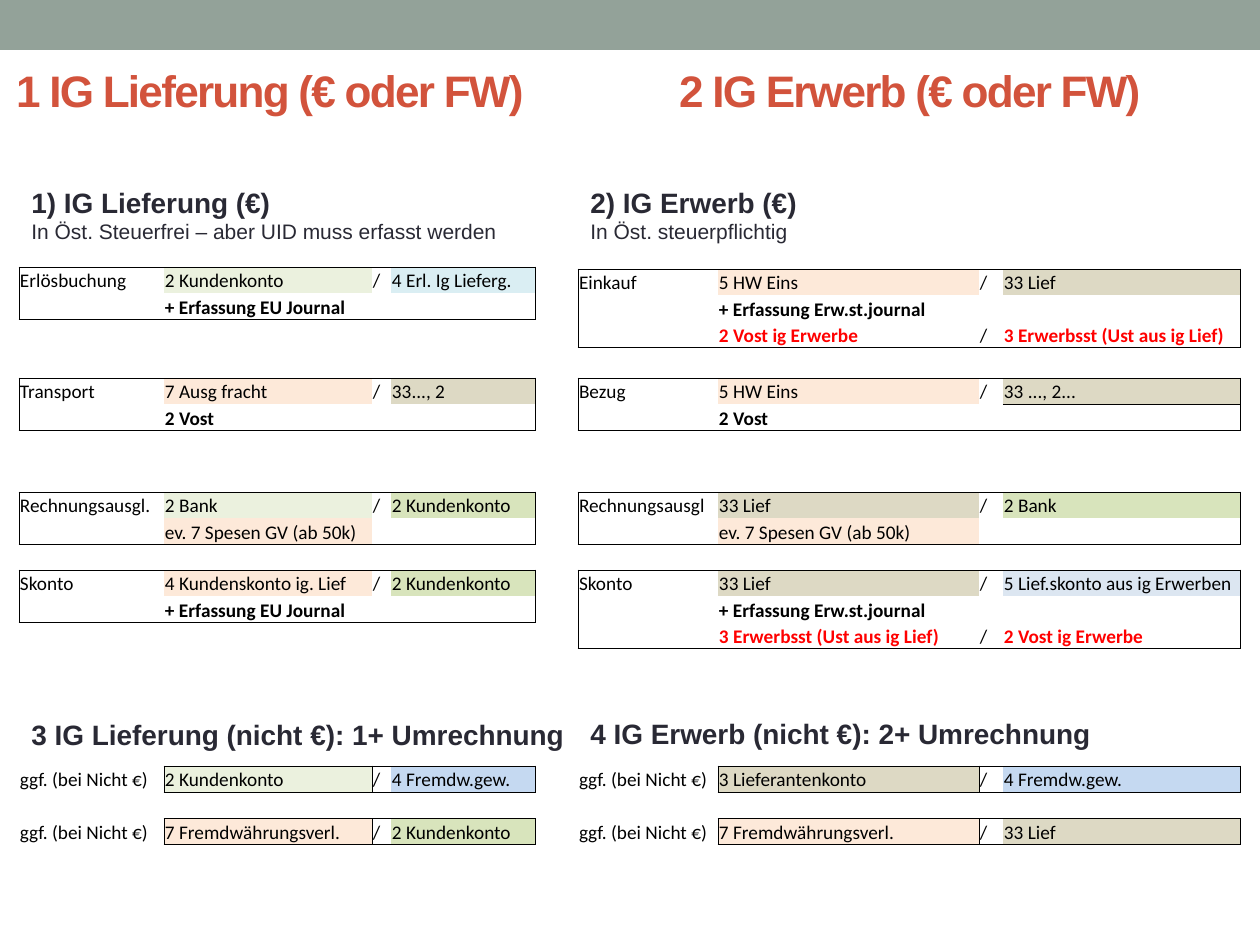
from dataclasses import dataclass

from lxml import etree
from pptx import Presentation
from pptx import util as u
from pptx.dml import color
from pptx.enum import shapes, text
from pptx.oxml import ns

SCALE = u.Inches(1) / 126
NO_STYLE = "{2D5ABB26-0587-4C30-8999-92F81FD0307C}"


def px(n):
    return u.Emu(round(n * SCALE))


def rgb(code):
    return color.RGBColor.from_string(code)


def put(obj, values):
    for name, value in values.items():
        setattr(obj, name, value)


def child(parent, tag, **attrs):
    return etree.SubElement(parent, ns.qn(tag), attrs)


@dataclass(frozen=True)
class Theme:
    head: str = "Arial"
    body: str = "Calibri"
    title_pt: float = 25.2
    heading_pt: int = 16
    note_pt: int = 12
    cell_pt: int = 11
    line_pt: float = 0.5
    band: str = "93A299"
    title: str = "D2533C"
    ink: str = "292934"
    black: str = "000000"
    red: str = "FF0000"
    mint: str = "EBF1DE"
    green: str = "D8E4BC"
    peach: str = "FDE9D9"
    sand: str = "DDD9C4"
    aqua: str = "DAEEF3"
    ice: str = "DCE6F1"
    blue: str = "C5D9F1"


class Deck:
    def __init__(self, theme):
        self.t = theme
        self.prs = Presentation()
        put(self.prs, {"slide_width": px(1260), "slide_height": px(945)})
        self.s = self.prs.slides.add_slide(self.prs.slide_layouts[5])

    def run(self, p, words, font, size, tone, bold=False):
        r = p.add_run()
        r.text = words
        put(r.font, {"name": font, "size": u.Pt(size), "bold": bold})
        r.font.color.rgb = rgb(tone)
        return r

    def band(self, x, y, w, h):
        sp = self.s.shapes.add_shape(shapes.MSO_SHAPE.RECTANGLE, px(x), px(y), px(w), px(h))
        sp.shadow.inherit = False
        sp.fill.solid()
        sp.fill.fore_color.rgb = rgb(self.t.band)
        sp.line.fill.background()

    def title(self, x, y, w, h, left, right, inset, tab):
        sp = self.s.shapes.title
        put(sp, {"left": px(x), "top": px(y), "width": px(w), "height": px(h)})
        tf = sp.text_frame
        put(tf, {"margin_left": px(inset), "margin_right": 0, "margin_top": 0, "margin_bottom": 0,
                 "word_wrap": True, "auto_size": text.MSO_AUTO_SIZE.NONE,
                 "vertical_anchor": text.MSO_ANCHOR.TOP})
        p = tf.paragraphs[0]
        p.alignment = text.PP_ALIGN.LEFT
        stops = child(p._p.get_or_add_pPr(), "a:tabLst")
        child(stops, "a:tab", pos=str(px(tab)), algn="l")
        r = self.run(p, f"{left}\t{right}", self.t.head, self.t.title_pt, self.t.title, True)
        r._r.get_or_add_rPr().set("spc", "-100")

    def heading(self, x, y, w, h, words, note=None):
        tf = self.s.shapes.add_textbox(px(x), px(y), px(w), px(h)).text_frame
        put(tf, {"word_wrap": False, "auto_size": text.MSO_AUTO_SIZE.SHAPE_TO_FIT_TEXT})
        self.run(tf.paragraphs[0], words, self.t.head, self.t.heading_pt, self.t.ink, True)
        if note:
            self.run(tf.add_paragraph(), note, self.t.head, self.t.note_pt, self.t.ink)

    def cell(self, cell, words, tone, sides):
        put(cell, {"margin_left": px(1), "margin_right": px(1), "margin_top": px(1),
                   "margin_bottom": 0, "vertical_anchor": text.MSO_ANCHOR.BOTTOM})
        p = cell.text_frame.paragraphs[0]
        if words:
            ink = self.t.red if tone == "red" else self.t.black
            self.run(p, words, self.t.body, self.t.cell_pt, ink, tone in ("bold", "red"))
        else:
            child(p._p, "a:endParaRPr", sz=str(self.t.cell_pt * 100))
        for side in "LRTB":
            if side in sides:
                ln = child(cell._tc.get_or_add_tcPr(), f"a:ln{side}", w=str(u.Pt(self.t.line_pt)))
                child(child(ln, "a:solidFill"), "a:srgbClr", val=self.t.black)
        if tone in (None, "bold", "red"):
            cell.fill.background()
        else:
            cell.fill.solid()
            cell.fill.fore_color.rgb = rgb(getattr(self.t, tone))

    def entries(self, x, y, widths, row_h, rows, boxes, underlined=()):
        frame = self.s.shapes.add_table(len(rows), len(widths), px(x), px(y),
                                        px(sum(widths)), px(row_h * len(rows)))
        tbl = frame.table
        put(tbl, {"first_row": False, "horz_banding": False})
        tbl._tbl.tblPr.find(ns.qn("a:tableStyleId")).text = NO_STYLE
        for col, w in zip(tbl.columns, widths):
            col.width = px(w)
        for i, row in enumerate(rows):
            tbl.rows[i].height = px(row_h)
            for j, (words, tone) in enumerate(row):
                sides = "B" if (i, j) in underlined else ""
                for top, bottom, first in boxes:
                    if top <= i <= bottom and j >= first:
                        edges = {"L": j == first, "R": j == len(widths) - 1,
                                 "T": i == top, "B": i == bottom}
                        sides += "".join(k for k, on in edges.items() if on)
                self.cell(tbl.cell(i, j), words, tone, sides)


def entry(label, debit, debit_tone, credit="", credit_tone=None):
    slash = "/" if credit else ""
    return [(label, None), (debit, debit_tone), (slash, None), (credit, credit_tone)]


LEFT, RIGHT = 19, 578
WIDTHS = {LEFT: (145, 208, 19, 144), RIGHT: (140, 261, 24, 237)}
ROW_H = 26.2
FX = "ggf. (bei Nicht €)"
EU = entry("", "+ Erfassung EU Journal", "bold")
JOURNAL = entry("", "+ Erfassung Erw.st.journal", "bold")
VOST = entry("", "2 Vost", "bold")
FEES = entry("", "ev. 7 Spesen GV (ab 50k)", "peach")
GAP = entry("", "", None)
INPUT_TAX, ACQ_TAX = "2 Vost ig Erwerbe", "3 Erwerbsst (Ust aus ig Lief)"

BOOKINGS = [
    (LEFT, 267, [entry("Erlösbuchung", "2 Kundenkonto", "mint", "4 Erl. Ig Lieferg.", "aqua"), EU]),
    (RIGHT, 269, [entry("Einkauf", "5 HW Eins", "peach", "33 Lief", "sand"), JOURNAL,
                  entry("", INPUT_TAX, "red", ACQ_TAX, "red")]),
    (LEFT, 378, [entry("Transport", "7 Ausg fracht", "peach", "33..., 2", "sand"), VOST]),
    (RIGHT, 378, [entry("Bezug", "5 HW Eins", "peach", "33 ..., 2...", "sand"), VOST]),
    (LEFT, 492, [entry("Rechnungsausgl.", "2 Bank", "mint", "2 Kundenkonto", "green"), FEES]),
    (RIGHT, 492, [entry("Rechnungsausgl", "33 Lief", "sand", "2 Bank", "green"), FEES]),
    (LEFT, 570, [entry("Skonto", "4 Kundenskonto ig. Lief", "peach", "2 Kundenkonto", "green"), EU]),
    (RIGHT, 570, [entry("Skonto", "33 Lief", "sand", "5 Lief.skonto aus ig Erwerben", "ice"),
                  JOURNAL, entry("", ACQ_TAX, "red", INPUT_TAX, "red")]),
]
CONVERSIONS = [
    (LEFT, [entry(FX, "2 Kundenkonto", "mint", "4 Fremdw.gew.", "blue"), GAP,
            entry(FX, "7 Fremdwährungsverl.", "peach", "2 Kundenkonto", "green")]),
    (RIGHT, [entry(FX, "3 Lieferantenkonto", "sand", "4 Fremdw.gew.", "blue"), GAP,
             entry(FX, "7 Fremdwährungsverl.", "peach", "33 Lief", "sand")]),
]


def main():
    d = Deck(Theme())
    d.band(0, 0, 1260, 50)
    d.title(0, 63, 1229, 91, "1 IG Lieferung (€ oder FW)", "2 IG Erwerb (€ oder FW)", 16, 663)
    for x, y, rows in BOOKINGS:
        underlined = [(0, 3)] if rows[0][0][0] == "Bezug" else []
        d.entries(x, y, WIDTHS[x], ROW_H, rows, [(0, len(rows) - 1, 0)], underlined)
    for x, rows in CONVERSIONS:
        d.entries(x, 766, WIDTHS[x], ROW_H, rows, [(0, 0, 1), (2, 2, 1)])
    d.heading(LEFT, 179, 495, 72, "1) IG Lieferung (€)",
              "In Öst. Steuerfrei – aber UID muss erfasst werden")
    d.heading(RIGHT, 179, 234, 72, "2) IG Erwerb (€)", "In Öst. steuerpflichtig")
    d.heading(LEFT, 711, 564, 47, "3 IG Lieferung (nicht €): 1+ Umrechnung")
    d.heading(RIGHT, 710, 532, 47, "4 IG Erwerb (nicht €): 2+ Umrechnung")
    d.prs.save("out.pptx")


if __name__ == "__main__":
    main()
